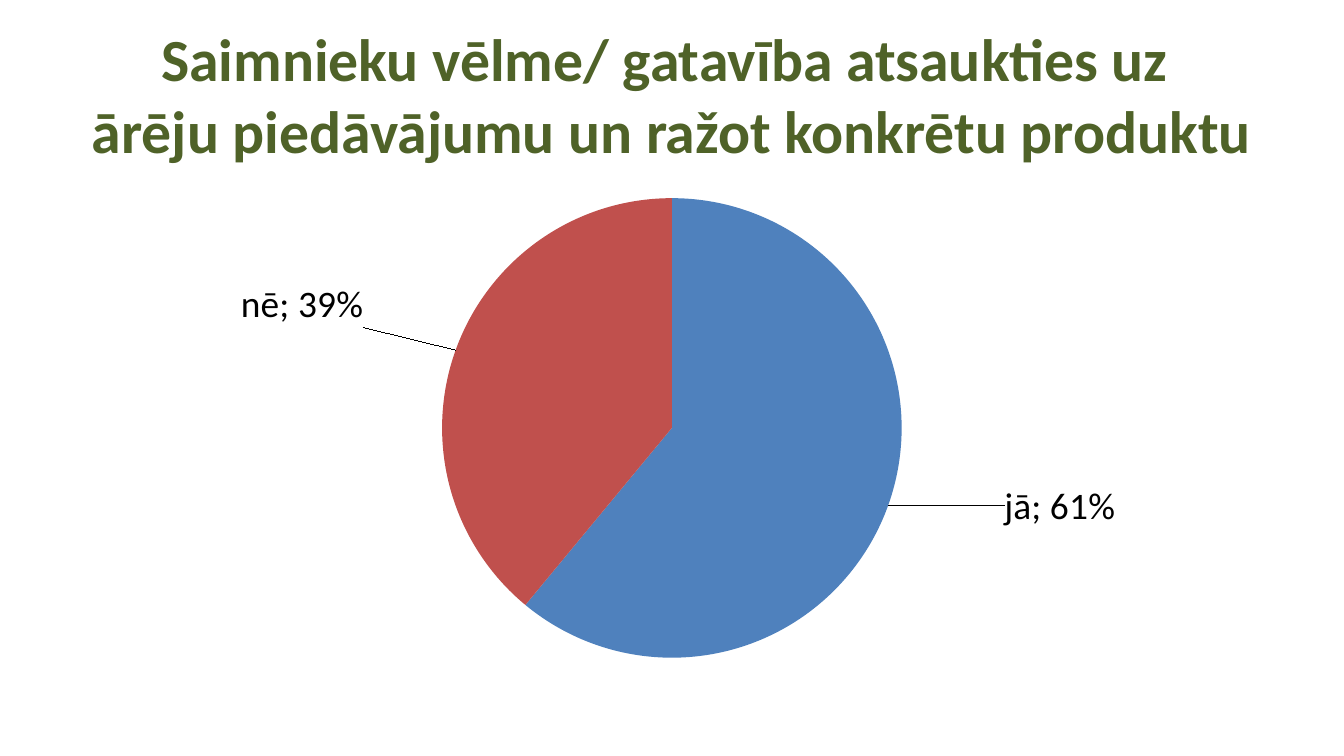
import pptx
import pptx.chart.data
import pptx.dml.color
import pptx.enum.chart
import pptx.enum.text
import pptx.oxml
import pptx.oxml.ns
import pptx.util

Pt = pptx.util.Pt
RGBColor = pptx.dml.color.RGBColor

GREEN = RGBColor(0x4F, 0x62, 0x28)
BLUE = RGBColor(0x4F, 0x81, 0xBD)
RED = RGBColor(0xC0, 0x50, 0x4D)
BLACK = RGBColor(0, 0, 0)

LABEL_CONTENT = (
    '<c:showLegendKey val="0"/><c:showVal val="0"/><c:showCatName val="1"/>'
    '<c:showSerName val="0"/><c:showPercent val="1"/><c:showBubbleSize val="0"/>'
    "<c:separator>; </c:separator>"
)
NUMBER_FORMAT = '<c:numFmt formatCode="0%" sourceLinked="0"/>'
NAMESPACE = pptx.oxml.ns.nsdecls("c")


class SlideBuilder:
    font_name = "Calibri"
    left, width = Pt(36), Pt(648)

    def __init__(self, deck):
        self.slide = deck.slides.add_slide(deck.slide_layouts[6])

    def title(self, lines, top, height):
        box = self.slide.shapes.add_textbox(self.left, top, self.width, height)
        frame = box.text_frame
        frame.word_wrap = True
        frame.vertical_anchor = pptx.enum.text.MSO_ANCHOR.MIDDLE
        para = frame.paragraphs[0]
        para.alignment = pptx.enum.text.PP_ALIGN.CENTER
        for index, line in enumerate(lines):
            if index:
                para.add_line_break()
            span = para.add_run()
            span.text = line
            span.font.name = self.font_name
            span.font.size = Pt(32)
            span.font.bold = True
            span.font.color.rgb = GREEN

    def pie(self, slices, top, height):
        """Draw (category, value, colour, label offset) slices as a pie."""
        data = pptx.chart.data.CategoryChartData()
        data.categories = [category for category, *_ in slices]
        data.add_series("Series 1", [value for _, value, *_ in slices])
        chart = self.slide.shapes.add_chart(
            pptx.enum.chart.XL_CHART_TYPE.PIE,
            self.left, top, self.width, height, data,
        ).chart
        chart.has_title = False
        chart.has_legend = False
        chart.font.name = self.font_name
        chart.font.size = Pt(20)
        chart.font.color.rgb = BLACK
        chart.plots[0].vary_by_categories = True
        series = chart.plots[0].series[0]
        for index, (_, _, colour, _) in enumerate(slices):
            fill = series.points[index].format.fill
            fill.solid()
            fill.fore_color.rgb = colour
        self.pie_labels(series, [offset for *_, offset in slices])
        self.plot_layout(chart, x=0.31, y=0.04, w=0.38, h=0.93)

    def pie_labels(self, series, offsets):
        """Label each slice, moved by a fraction of the chart size."""
        labels = "".join(
            f'<c:dLbl><c:idx val="{index}"/><c:layout><c:manualLayout>'
            f'<c:x val="{x}"/><c:y val="{y}"/></c:manualLayout></c:layout>'
            f'{NUMBER_FORMAT}<c:dLblPos val="outEnd"/>{LABEL_CONTENT}</c:dLbl>'
            for index, (x, y) in enumerate(offsets)
        )
        element = pptx.oxml.parse_xml(
            f'<c:dLbls {NAMESPACE}>{labels}{NUMBER_FORMAT}<c:dLblPos val="outEnd"/>'
            f'{LABEL_CONTENT}<c:showLeaderLines val="1"/></c:dLbls>'
        )
        series._element.find(pptx.oxml.ns.qn("c:cat")).addprevious(element)

    def plot_layout(self, chart, **fractions):
        values = "".join(f'<c:{key} val="{val}"/>' for key, val in fractions.items())
        layout = pptx.oxml.parse_xml(
            f'<c:layout {NAMESPACE}><c:manualLayout><c:layoutTarget val="inner"/>'
            f'<c:xMode val="edge"/><c:yMode val="edge"/>{values}'
            "</c:manualLayout></c:layout>"
        )
        plot_area = chart._chartSpace.chart.plotArea
        for old in plot_area.findall(pptx.oxml.ns.qn("c:layout")):
            plot_area.remove(old)
        plot_area.insert(0, layout)


def main():
    deck = pptx.Presentation()
    deck.slide_width, deck.slide_height = Pt(720), Pt(405)
    builder = SlideBuilder(deck)
    builder.title(
        ["Saimnieku vēlme/ gatavība atsaukties uz ",
         "ārēju piedāvājumu un ražot konkrētu produktu"],
        top=Pt(16.5), height=Pt(67.5),
    )
    builder.pie(
        [("jā", 61, BLUE, (0.09, -0.05)), ("nē", 39, RED, (-0.07, -0.04))],
        top=Pt(94.5), height=Pt(267),
    )
    deck.save("out.pptx")


if __name__ == "__main__":
    main()
